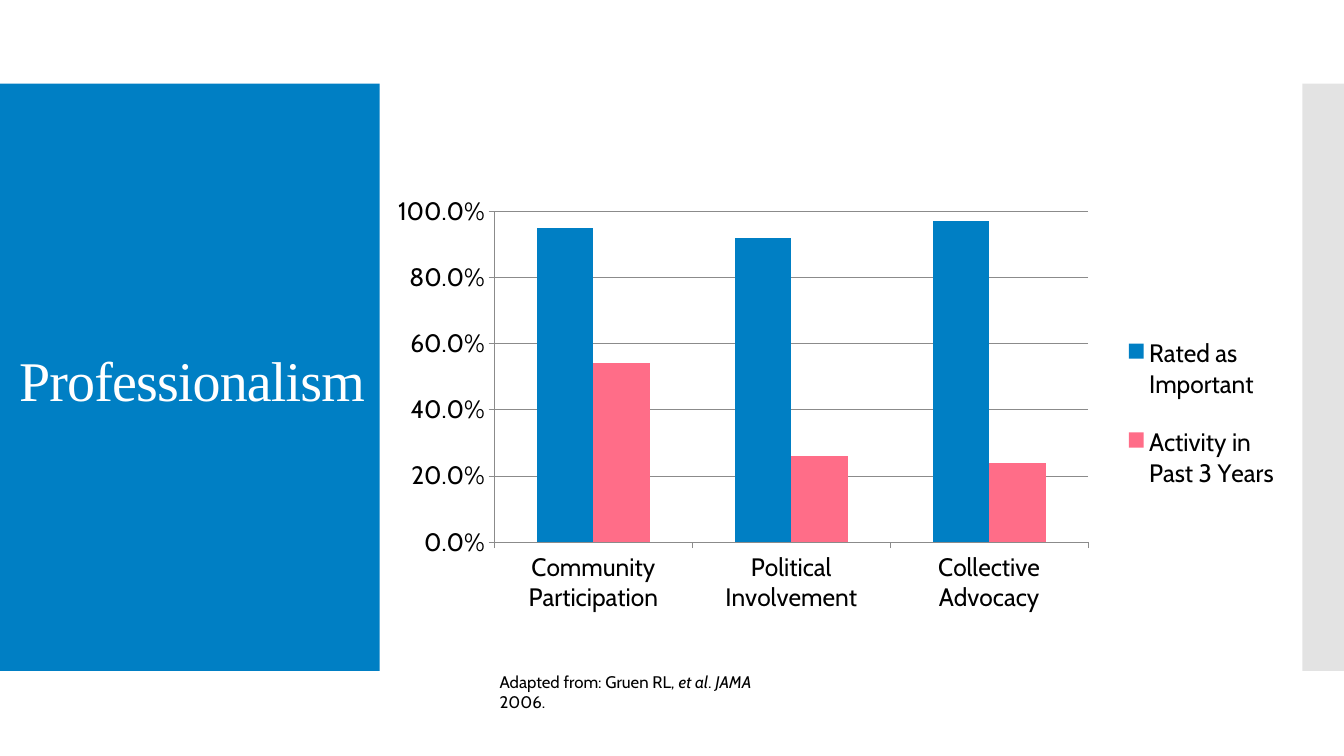
from lxml import etree
from pptx import Presentation
from pptx.chart.data import CategoryChartData
from pptx.dml.color import RGBColor
from pptx.enum.chart import XL_CHART_TYPE, XL_LEGEND_POSITION, XL_TICK_MARK
from pptx.enum.shapes import MSO_SHAPE
from pptx.enum.text import MSO_ANCHOR, MSO_AUTO_SIZE, PP_ALIGN
from pptx.oxml import parse_xml
from pptx.oxml.ns import nsdecls, qn
from pptx.util import Cm, Pt

COLUMN = XL_CHART_TYPE.COLUMN_CLUSTERED
RIGHT = XL_LEGEND_POSITION.RIGHT
OUTSIDE = XL_TICK_MARK.OUTSIDE
RECT = MSO_SHAPE.RECTANGLE
MIDDLE = MSO_ANCHOR.MIDDLE
GROW = MSO_AUTO_SIZE.SHAPE_TO_FIT_TEXT
LEFT = PP_ALIGN.LEFT

BLUE, PINK, GREY, LINE = "007FC4", "FF6D88", "C8C8C8", "8B8B8B"


def rgb(value):
    return RGBColor.from_string(value)


def set_font(font, color, **values):
    for name, value in values.items():
        setattr(font, name, value)
    font.color.rgb = rgb(color)


prs = Presentation()
prs.slide_width, prs.slide_height = Cm(33.87), Cm(19.05)
s = prs.slides.add_slide(prs.slide_layouts[5])

for left, width, color in [(0, 9.57, BLUE), (32.82, 1.05, GREY)]:
    sp = s.shapes.add_shape(RECT, Cm(left), Cm(2.11), Cm(width), Cm(14.8))
    sp.shadow.inherit = False
    sp.fill.solid()
    sp.fill.fore_color.rgb = rgb(color)
    sp.line.fill.background()
clr = sp._element.spPr.find(".//" + qn("a:srgbClr"))
etree.SubElement(clr, qn("a:alpha"), val="50000")

title = s.shapes.title
title.left, title.top, title.width, title.height = Cm(0.23), Cm(3.28), Cm(9.3), Cm(12.78)
s.shapes._spTree.append(title._element)
tf = title.text_frame
tf.word_wrap = True
tf.vertical_anchor = MIDDLE
p = tf.paragraphs[0]
p.alignment = LEFT
p.line_spacing = 0.9
r = p.add_run()
r.text = "Professionalism"
set_font(r.font, "FFFFFF", name="Times New Roman", size=Pt(40))
r.font._element.set("spc", "-60")

tf = s.shapes.add_textbox(Cm(12.34), Cm(16.79), Cm(7.95), Cm(0.77)).text_frame
tf.word_wrap = True
tf.auto_size = GROW
p = tf.paragraphs[0]
for text, italic in [("Adapted from: Gruen RL, ", False), ("et al", True), (". ", False),
                     ("JAMA", True), (" 2006.", False)]:
    r = p.add_run()
    r.text = text
    set_font(r.font, "000000", name="Cabin", size=Pt(12), italic=italic)

data = CategoryChartData(number_format="0.0%")
data.categories = ["Community Participation", "Political Involvement", "Collective Advocacy"]
data.add_series("Rated as Important", [0.95, 0.92, 0.97])
data.add_series("Activity in Past 3 Years", [0.54, 0.26, 0.24])
chart = s.shapes.add_chart(COLUMN, Cm(10.03), Cm(4.78), Cm(22.43), Cm(11.28), data).chart
set_font(chart.font, "000000", name="Cabin", size=Pt(18))
chart.has_title = False
chart.has_legend = True
chart.legend.position = RIGHT
chart.legend.include_in_layout = False

plot = chart.plots[0]
plot.gap_width = 150
plot.overlap = 0
plot.vary_by_categories = False
for series, color in zip(plot.series, [BLUE, PINK]):
    series.format.fill.solid()
    series.format.fill.fore_color.rgb = rgb(color)

cat, val = chart.category_axis, chart.value_axis
val.minimum_scale, val.maximum_scale, val.major_unit = 0, 1, 0.2
val.has_major_gridlines = True
val.tick_labels.number_format = "0.0%"
val.tick_labels.number_format_is_linked = False
for axis in (cat, val):
    axis.major_tick_mark = OUTSIDE
for part in (cat, val, val.major_gridlines):
    part.format.line.color.rgb = rgb(LINE)
    part.format.line.width = Pt(0.75)

area = chart._chartSpace.chart.plotArea
legend = chart.legend._element
inner = '<c:layoutTarget val="inner"/>'
modes = "".join(f'<c:{k}Mode val="edge"/>' for k in "xy")
for parent, index, target, box in [(area, 0, inner, (0.083, 0.048, 0.686, 0.74)),
                                   (legend, 1, "", (0.81, 0.27, 0.18, 0.46))]:
    for layout in parent.findall(qn("c:layout")):
        parent.remove(layout)
    sizes = "".join(f'<c:{k} val="{v}"/>' for k, v in zip("xywh", box))
    parent.insert(index, parse_xml(
        f'<c:layout {nsdecls("c")}><c:manualLayout>{target}{modes}{sizes}'
        f'</c:manualLayout></c:layout>'))

prs.save("out.pptx")
